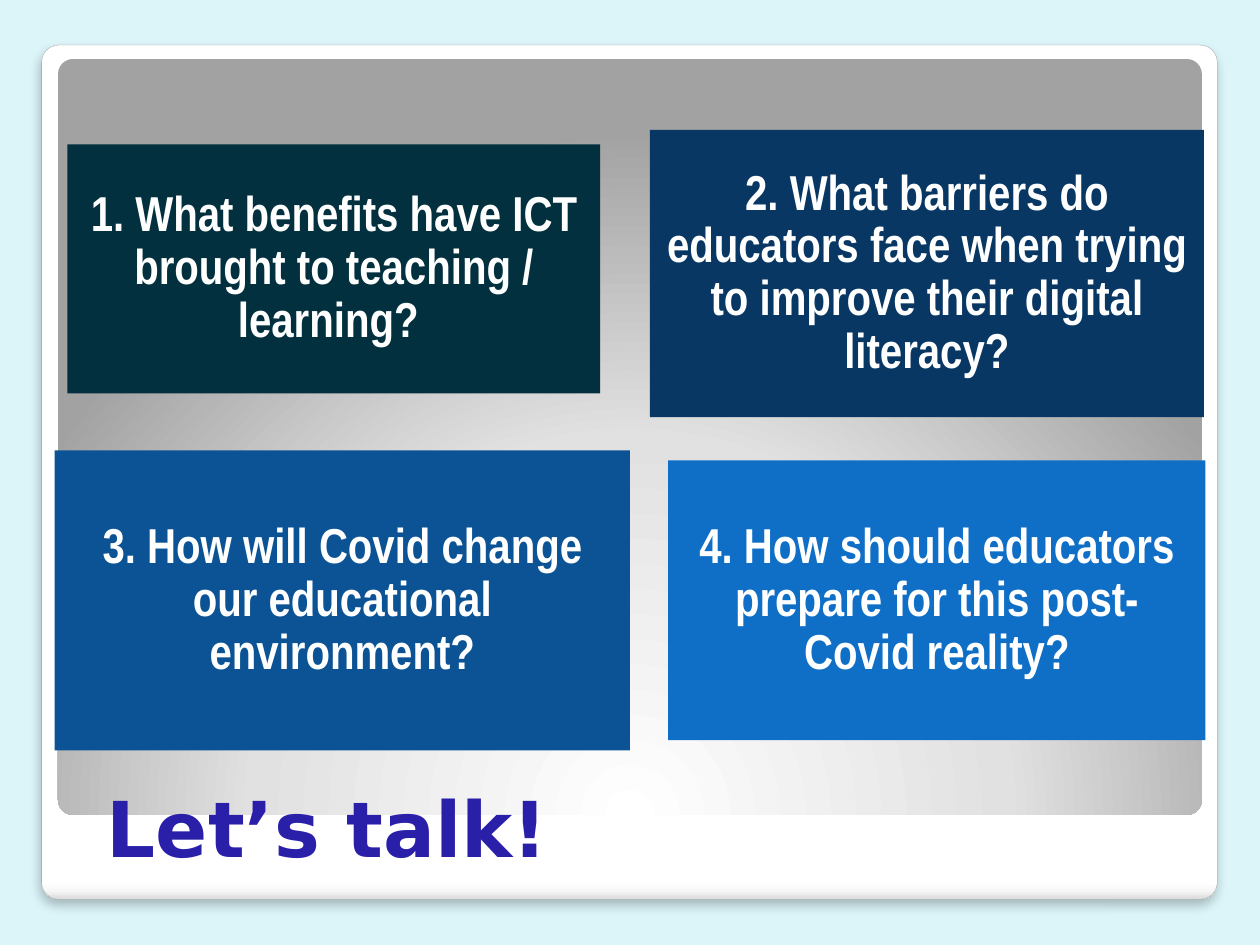
from lxml import etree
from pptx import Presentation
from pptx.dml.color import RGBColor
from pptx.enum.shapes import MSO_SHAPE
from pptx.enum.text import MSO_ANCHOR, MSO_AUTO_SIZE, PP_ALIGN
from pptx.oxml import parse_xml
from pptx.util import Cm, Pt

RECTANGLE = MSO_SHAPE.RECTANGLE
ROUNDED = MSO_SHAPE.ROUNDED_RECTANGLE
MIDDLE, BOTTOM = MSO_ANCHOR.MIDDLE, MSO_ANCHOR.BOTTOM
CENTER, LEFT = PP_ALIGN.CENTER, PP_ALIGN.LEFT
NO_AUTOFIT = MSO_AUTO_SIZE.NONE

PALE_AQUA = RGBColor(0xDB, 0xF5, 0xF9)
FRAME_LINE = RGBColor(0xA4, 0xA4, 0xA4)
INDIGO = RGBColor(0x29, 0x1F, 0xA9)
WHITE = RGBColor(0xFF, 0xFF, 0xFF)
DARK_TEAL = RGBColor(0x02, 0x30, 0x3E)
NAVY = RGBColor(0x08, 0x37, 0x63)
BLUE = RGBColor(0x0B, 0x53, 0x94)
BRIGHT_BLUE = RGBColor(0x0F, 0x6F, 0xC6)

DRAWING = "http://schemas.openxmlformats.org/drawingml/2006/main"


def add_panel(left, top, width, height, stops, direction):
    """Add a rounded panel with a gradient of (percent, colour) stops."""
    panel = slide.shapes.add_shape(ROUNDED, Cm(left), Cm(top), Cm(width), Cm(height))
    panel.adjustments[0] = 0.02
    panel.shadow.inherit = False
    panel.line.fill.background()
    stop_list = "".join(
        f'<a:gs pos="{percent * 1000}"><a:srgbClr val="{colour}"/></a:gs>'
        for percent, colour in stops
    )
    gradient = parse_xml(
        f'<a:gradFill xmlns:a="{DRAWING}" rotWithShape="1">'
        f"<a:gsLst>{stop_list}</a:gsLst>{direction}</a:gradFill>"
    )
    panel.element.spPr.find(f"{{{DRAWING}}}prstGeom").addnext(gradient)
    return panel


presentation = Presentation()
presentation.slide_width = Cm(25.4)
presentation.slide_height = Cm(19.05)
slide = presentation.slides.add_slide(presentation.slide_layouts[5])

# Background
slide.background.fill.solid()
slide.background.fill.fore_color.rgb = PALE_AQUA

# White frame with a soft shadow
frame = add_panel(
    0.84, 0.91, 23.7, 17.22,
    [(0, "FFFFFF"), (98, "FFFFFF"), (99, "F7F7F7"), (100, "DADADA")],
    '<a:lin ang="5400000" scaled="0"/>',
)
frame.line.color.rgb = FRAME_LINE
frame.line.width = Pt(0.16)
effects = frame.element.spPr.find(f"{{{DRAWING}}}effectLst")
shadow = etree.SubElement(
    effects, f"{{{DRAWING}}}outerShdw",
    blurRad=str(Pt(6)), dist=str(Pt(4)), dir="5400000", algn="t", rotWithShape="0",
)
shadow_colour = etree.SubElement(shadow, f"{{{DRAWING}}}srgbClr", val="000000")
etree.SubElement(shadow_colour, f"{{{DRAWING}}}alpha", val="25000")

# Grey panel lit from below
grey_panel = add_panel(
    1.17, 1.19, 23.06, 15.24,
    [(0, "FFFFFF"), (55, "E1E1E1"), (100, "A2A2A2")],
    '<a:path path="circle">'
    '<a:fillToRect l="50000" t="175000" r="50000" b="-75000"/></a:path>',
)

# Title, in front of the panels
title = slide.shapes.title
grey_panel.element.addnext(title.element)
title.left, title.top = Cm(1.9), Cm(15.72)
title.width, title.height = Cm(11.4), Cm(2.01)
title.text_frame.text = "Let’s talk!"
title.text_frame.auto_size = NO_AUTOFIT
title.text_frame.vertical_anchor = BOTTOM
paragraph = title.text_frame.paragraphs[0]
paragraph.alignment = LEFT
paragraph.font.name = "DejaVu Sans"
paragraph.font.size = Pt(44)
paragraph.font.bold = True
paragraph.font.color.rgb = INDIGO

# Question cards: left, top, width, height, colour, text
questions = [
    (1.36, 2.91, 10.74, 5.02, DARK_TEAL,
     "1. What benefits have ICT brought to teaching / learning? "),
    (13.1, 2.62, 11.17, 5.79, NAVY,
     "2. What barriers do educators face when trying to improve their digital literacy?"),
    (1.1, 9.08, 11.6, 6.05, BLUE,
     "3. How will Covid change our educational environment?"),
    (13.47, 9.28, 10.83, 5.64, BRIGHT_BLUE,
     "4. How should educators prepare for this post-Covid reality?"),
]
for left, top, width, height, colour, question in questions:
    card = slide.shapes.add_shape(RECTANGLE, Cm(left), Cm(top), Cm(width), Cm(height))
    card.shadow.inherit = False
    card.fill.solid()
    card.fill.fore_color.rgb = colour
    card.line.fill.background()
    text_frame = card.text_frame
    text_frame.text = question
    text_frame.word_wrap = True
    text_frame.vertical_anchor = MIDDLE
    text_frame.margin_left = text_frame.margin_right = Cm(0.3)
    text_frame.margin_top = text_frame.margin_bottom = Cm(0.3)
    paragraph = text_frame.paragraphs[0]
    paragraph.alignment = CENTER
    paragraph.line_spacing = 0.9
    paragraph.font.name = "Arial Narrow"
    paragraph.font.size = Pt(28)
    paragraph.font.bold = True
    paragraph.font.color.rgb = WHITE

presentation.save("out.pptx")
